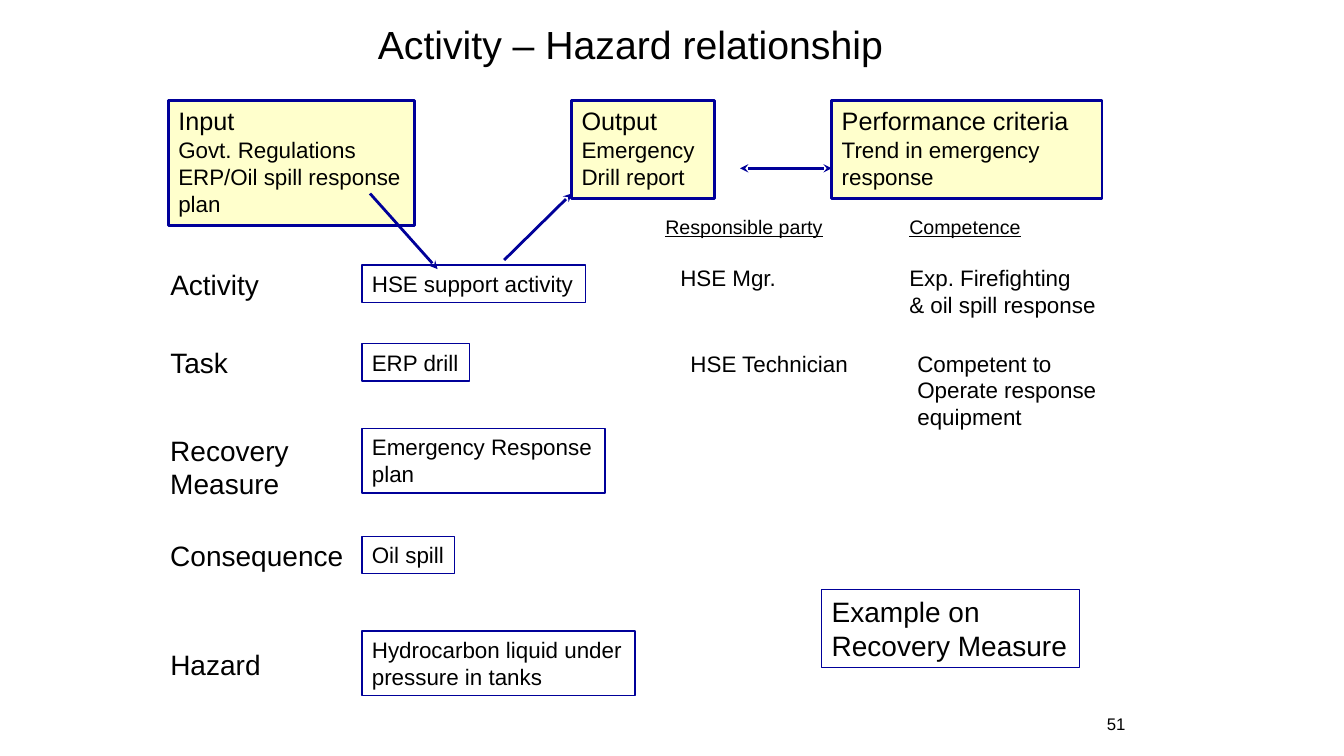
from lxml.etree import SubElement
from pptx import Presentation
from pptx.dml.color import RGBColor
from pptx.enum.shapes import MSO_CONNECTOR as Link, MSO_SHAPE as Shape
from pptx.enum.text import MSO_ANCHOR as Anchor, MSO_AUTO_SIZE as Fit, PP_ALIGN as Align
from pptx.oxml.ns import qn
from pptx.util import Inches, Pt

NAVY = "000099"
CREAM = "FFFFCC"
WHITE = "FFFFFF"
BLACK = "000000"


def color(code):
    return RGBColor.from_string(code)


def write(shape, text, size, head=None, under=None, wrap=False):
    frame = shape.text_frame
    frame.word_wrap = wrap
    frame.auto_size = Fit.SHAPE_TO_FIT_TEXT
    frame.vertical_anchor = Anchor.TOP
    for i, line in enumerate(text.split("\n")):
        para = frame.paragraphs[0] if i == 0 else frame.add_paragraph()
        para.text = line
        para.alignment = Align.LEFT
        font = para.font
        font.name = "Arial"
        font.size = Pt(head if head and i == 0 else size)
        font.color.rgb = color(BLACK)
        font.underline = under


def label(slide, box, text, size, under=None):
    write(slide.shapes.add_textbox(*map(Inches, box)), text, size, under=under)


def panel(slide, box, text, size=16, fill=WHITE, line=1, head=None, wrap=False):
    shape = slide.shapes.add_shape(Shape.RECTANGLE, *map(Inches, box))
    shape.shadow.inherit = False
    if fill:
        shape.fill.solid()
        shape.fill.fore_color.rgb = color(fill)
    else:
        shape.fill.background()
    if line:
        shape.line.color.rgb = color(NAVY)
        shape.line.width = Pt(line)
    else:
        shape.line.fill.background()
    write(shape, text, size, head, wrap=wrap)


def arrow(slide, start, end, tips=("tailEnd",)):
    link = slide.shapes.add_connector(Link.STRAIGHT, *map(Inches, start + end))
    link.line.color.rgb = color(NAVY)
    link.line.width = Pt(2)
    for tip in tips:
        SubElement(link.line._get_or_add_ln(), qn("a:" + tip), type="stealth")
    SubElement(link._element.spPr, qn("a:effectLst"))


def stages(slide, x, y):
    rows = [
        (0, 1.09, 0.44, "Activity", 0.03, 2.22, 0.37, "HSE support activity"),
        (0.78, 0.78, 0.44, "Task", 0.81, 1.07, 0.37, "ERP drill"),
        (1.65, 1.47, 0.77, "Recovery\nMeasure", 1.65, 2.41, 0.64, "Emergency Response\nplan"),
        (2.69, 1.94, 0.44, "Consequence", 2.72, 0.92, 0.37, "Oil spill"),
        (3.77, 1.11, 0.44, "Hazard", 3.66, 2.71, 0.64,
         "Hydrocarbon liquid under\npressure in tanks"),
    ]
    for top, wide, high, name, drop, span, tall, text in rows:
        label(slide, (x, y + top, wide, high), name, 20)
        panel(slide, (x + 2, y + drop, span, tall), text)


def flow(slide, x, y):
    cards = [
        (0, 2.44, 1.24, "Input\nGovt. Regulations\nERP/Oil spill response\nplan", False),
        (4, 1.42, 0.97, "Output\nEmergency\nDrill report", False),
        (6.58, 2.68, 0.97, "Performance criteria\nTrend in emergency response", True),
    ]
    for left, wide, high, text, wrap in cards:
        panel(slide, (x + left, y, wide, high), text, 16, CREAM, 2, 18, wrap)
    arrow(slide, (x + 2, y + 0.92), (x + 2.67, y + 1.67))
    arrow(slide, (x + 3.33, y + 1.58), (x + 4, y + 0.92))
    arrow(slide, (x + 5.67, y + 0.67), (x + 6.58, y + 0.67), ("headEnd", "tailEnd"))


def duties(slide, x, y):
    label(slide, (x, y, 1.77, 0.34), "Responsible party", 14, True)
    label(slide, (x + 2.42, y, 1.31, 0.34), "Competence", 14, True)
    panel(slide, (x + 0.15, y + 0.49, 1.16, 0.37), "HSE Mgr.", line=0)
    label(slide, (x + 0.25, y + 1.34, 1.79, 0.37), "HSE Technician", 16)
    label(slide, (x + 2.42, y + 0.49, 2.05, 0.64),
          "Exp. Firefighting\n& oil spill response", 16)
    label(slide, (x + 2.5, y + 1.34, 1.98, 0.9),
          "Competent to\nOperate response\nequipment", 16)


def main():
    deck = Presentation()
    deck.slide_width = Inches(13.33)
    deck.slide_height = Inches(7.5)
    slide = deck.slides.add_slide(deck.slide_layouts[6])
    stages(slide, 1.59, 2.6)
    flow(slide, 1.67, 1)
    duties(slide, 6.5, 2.08)
    panel(slide, (8.15, 5.85, 2.56, 0.77), "Example on\nRecovery Measure", 20, None)
    label(slide, (10.88, 7.03, 0.39, 0.3), "51", 12)
    label(slide, (3.65, 0.15, 5.27, 0.57), "Activity – Hazard relationship", 28)
    deck.save("out.pptx")


if __name__ == "__main__":
    main()
